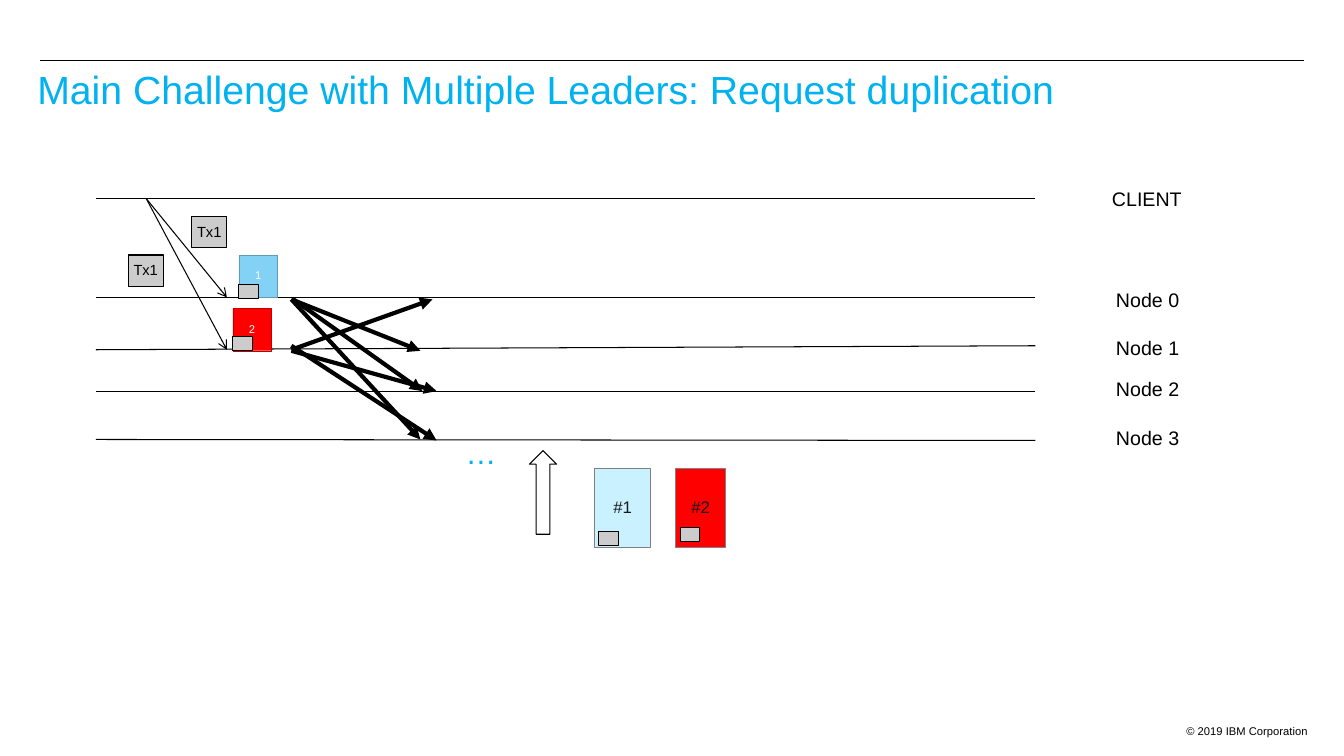
from dataclasses import dataclass

import lxml.etree
import pptx
import pptx.dml.color
import pptx.enum.shapes
import pptx.enum.text
import pptx.oxml.ns
import pptx.util

RGBColor = pptx.dml.color.RGBColor
Inches = pptx.util.Inches
Pt = pptx.util.Pt
Align = pptx.enum.text.PP_ALIGN
Anchor = pptx.enum.text.MSO_ANCHOR
Shape = pptx.enum.shapes.MSO_SHAPE

BLACK = RGBColor(0x00, 0x00, 0x00)
WHITE = RGBColor(0xFF, 0xFF, 0xFF)
EDGE = RGBColor(0x01, 0x00, 0x00)
DARK = RGBColor(0x19, 0x19, 0x19)
GRAY = RGBColor(0x80, 0x80, 0x80)
SILVER = RGBColor(0xCC, 0xCC, 0xCC)
CYAN = RGBColor(0x00, 0xB2, 0xEF)
SKY = RGBColor(0x83, 0xD1, 0xF5)
STEEL = RGBColor(0x61, 0x9B, 0xB5)
PALE = RGBColor(0xC9, 0xF1, 0xFF)
RED = RGBColor(0xFF, 0x00, 0x00)
MAROON = RGBColor(0xC0, 0x00, 0x00)


@dataclass
class Lane:
    name: str
    start: float
    end: float
    left: float
    top: float
    width: float


@dataclass
class Arrow:
    x1: float
    y1: float
    x2: float
    y2: float
    weight: float = 3
    head: str = "triangle"


@dataclass
class Block:
    left: float
    top: float
    width: float
    height: float
    fill: RGBColor = SILVER
    edge: RGBColor = EDGE
    weight: float = 0.75
    text: str = ""
    size: float = 8
    ink: RGBColor = BLACK


LANES = [
    Lane("CLIENT", 1.97, 1.97, 10.93, 1.83, 2.1),
    Lane("Node 0", 2.95, 2.95, 10.97, 2.83, 2.1),
    Lane("Node 1", 3.47, 3.43, 10.97, 3.31, 1.66),
    Lane("Node 2", 3.88, 3.88, 10.97, 3.72, 1.66),
    Lane("Node 3", 4.36, 4.37, 10.97, 4.2, 1.66),
]

ARROWS = [
    Arrow(1.45, 1.97, 2.25, 2.95, 0.75, "arrow"),
    Arrow(1.45, 1.97, 2.25, 3.47, 0.75, "arrow"),
    Arrow(2.89, 2.97, 4.17, 3.48),
    Arrow(2.91, 2.97, 4.19, 3.88),
    Arrow(2.89, 2.97, 4.17, 4.36),
    Arrow(2.89, 3.47, 4.29, 2.97),
    Arrow(2.89, 3.48, 4.33, 3.88),
    Arrow(2.89, 3.43, 4.33, 4.37),
]

BLOCKS = [
    Block(1.9, 2.15, 0.35, 0.31, text="Tx1", size=10.5),
    Block(1.27, 2.53, 0.35, 0.31, text="Tx1", size=10.5),
    Block(2.37, 2.53, 0.38, 0.42, SKY, STEEL, 0.25, "1", 8, WHITE),
    Block(2.31, 3.06, 0.38, 0.42, RED, MAROON, 0.25, "2", 8, WHITE),
    Block(5.9, 4.65, 0.55, 0.78, PALE, GRAY, 0.75, "#1", 12, DARK),
    Block(6.7, 4.65, 0.5, 0.78, RED, GRAY, 0.75, "#2", 12, DARK),
]

# Each proposal holds a small copy of the request.
CHIPS = [
    Block(left, top, 0.19, 0.14)
    for left, top in [(2.37, 2.82), (2.31, 3.34), (5.94, 5.27), (6.75, 5.23)]
]


def write(frame, text: str, size: float, ink: RGBColor, align=Align.LEFT) -> None:
    frame.text = text
    line = frame.paragraphs[0]
    line.alignment = align
    line.line_spacing = 0.9
    line.font.name = "Arial"
    line.font.size = Pt(size)
    line.font.color.rgb = ink


def add_line(slide, x1: float, y1: float, x2: float, y2: float,
             weight: float = 0.75, head: str = "") -> None:
    line = slide.shapes.add_connector(
        pptx.enum.shapes.MSO_CONNECTOR.STRAIGHT,
        Inches(x1), Inches(y1), Inches(x2), Inches(y2))
    line.line.color.rgb = BLACK
    line.line.width = Pt(weight)
    tag = pptx.oxml.ns.qn
    if head:
        lxml.etree.SubElement(line.line._get_or_add_ln(), tag("a:tailEnd"), type=head)
    lxml.etree.SubElement(line._element.spPr, tag("a:effectLst"))


def add_label(slide, left: float, top: float, width: float, height: float,
              text: str, size: float, ink: RGBColor = BLACK,
              align=Align.LEFT, wrap: bool = True, grow: bool = True) -> None:
    frame = slide.shapes.add_textbox(
        Inches(left), Inches(top), Inches(width), Inches(height)).text_frame
    frame.word_wrap = wrap
    if grow:
        frame.auto_size = pptx.enum.text.MSO_AUTO_SIZE.SHAPE_TO_FIT_TEXT
    write(frame, text, size, ink, align)


def add_block(slide, block: Block) -> None:
    shape = slide.shapes.add_shape(
        Shape.RECTANGLE, Inches(block.left), Inches(block.top),
        Inches(block.width), Inches(block.height))
    shape.shadow.inherit = False
    shape.fill.solid()
    shape.fill.fore_color.rgb = block.fill
    shape.line.color.rgb = block.edge
    shape.line.width = Pt(block.weight)
    if block.text:
        frame = shape.text_frame
        frame.margin_left = frame.margin_right = 0
        frame.margin_top = frame.margin_bottom = 0
        frame.vertical_anchor = Anchor.MIDDLE
        write(frame, block.text, block.size, block.ink, Align.CENTER)


def add_title(slide) -> None:
    title = slide.shapes.title
    title.left, title.top = Inches(0.27), Inches(0.65)
    title.width, title.height = Inches(12.67), Inches(0.8)
    title.text_frame.vertical_anchor = Anchor.TOP
    write(title.text_frame,
          "Main Challenge with Multiple Leaders: Request duplication", 28, CYAN)


def add_pointer(slide) -> None:
    shape = slide.shapes.add_shape(
        Shape.DOWN_ARROW, Inches(5.25), Inches(4.47), Inches(0.27), Inches(0.83))
    shape.rotation = 180
    shape.shadow.inherit = False
    shape.fill.background()
    shape.line.color.rgb = EDGE
    shape.line.width = Pt(0.75)


def main() -> None:
    deck = pptx.Presentation()
    deck.slide_width, deck.slide_height = Inches(13.33), Inches(7.5)
    slide = deck.slides.add_slide(deck.slide_layouts.get_by_name("Title Only"))

    add_line(slide, 0.4, 0.6, 12.93, 0.6)
    add_label(slide, 11.07, 7.15, 2, 0.2, "© 2019 IBM Corporation", 8,
              align=Align.RIGHT, grow=False)
    add_title(slide)
    for lane in LANES:
        add_line(slide, 0.95, lane.start, 10.27, lane.end)
        add_label(slide, lane.left, lane.top, lane.width, 0.31, lane.name, 14)
    for arrow in ARROWS:
        add_line(slide, arrow.x1, arrow.y1, arrow.x2, arrow.y2,
                 arrow.weight, arrow.head)
    for block in BLOCKS + CHIPS:
        add_block(slide, block)
    add_label(slide, 4.52, 4.3, 0.51, 0.43, "…", 22, CYAN, wrap=False)
    add_pointer(slide)
    deck.save("out.pptx")


if __name__ == "__main__":
    main()
